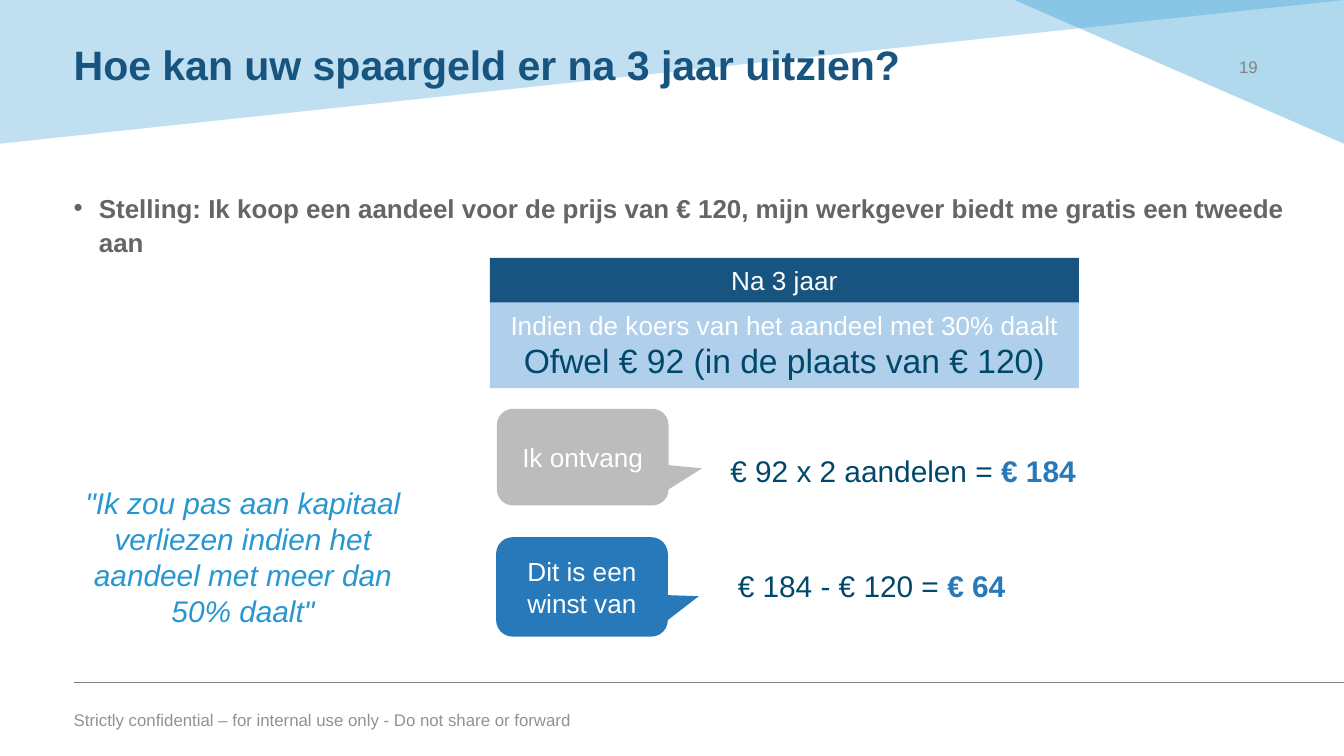
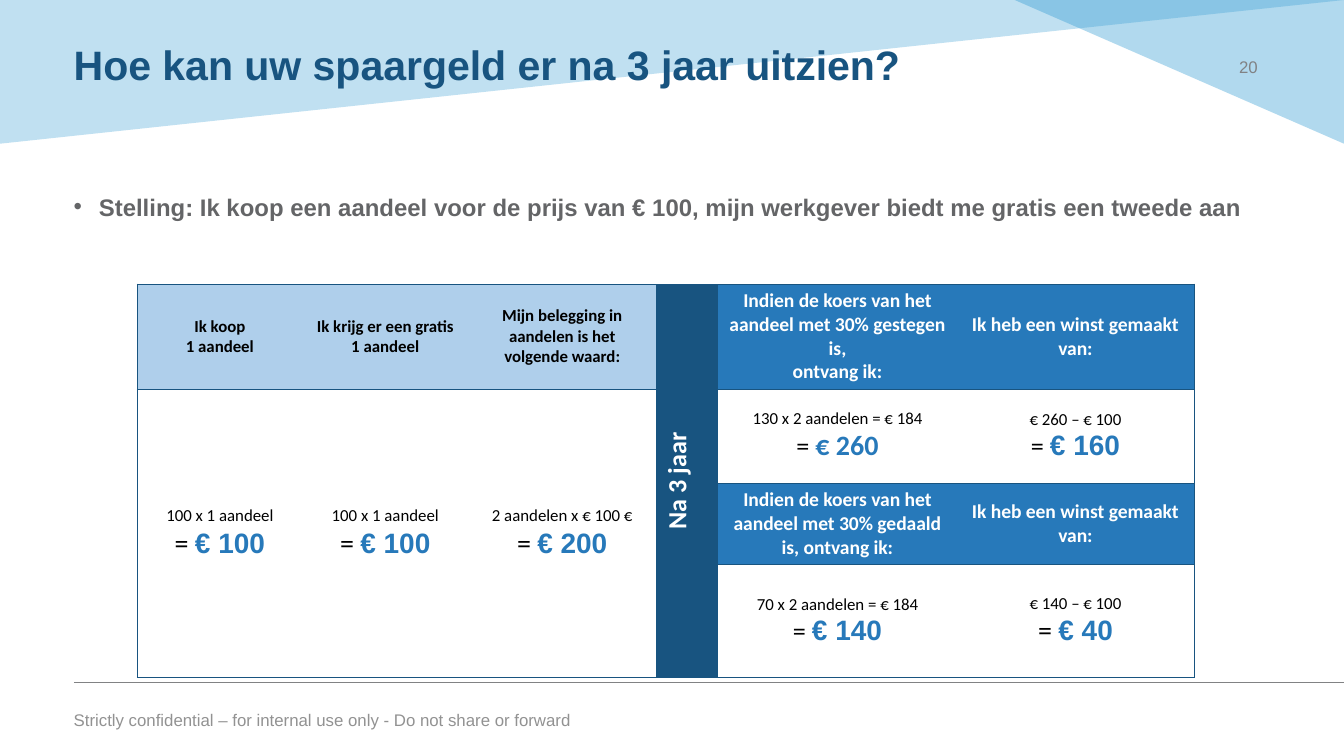
from lxml import etree
from pptx import Presentation
from pptx import util as u
from pptx.dml.color import RGBColor
from pptx.enum import shapes, text
from pptx.oxml import ns

Pt = u.Pt
NAVY = RGBColor(0x18, 0x54, 0x80)
BLUE = RGBColor(0x27, 0x79, 0xBA)
SKY = RGBColor(0x28, 0x97, 0xD1)
PALE = RGBColor(0xAF, 0xCF, 0xEB)
DEEP = RGBColor(0x00, 0x48, 0x6B)
GRAY = RGBColor(0xBC, 0xBC, 0xBC)
RULE = RGBColor(0x81, 0x82, 0x84)
FOOT = RGBColor(0x92, 0x92, 0x92)
BODY = RGBColor(0x64, 0x65, 0x67)
WHITE = RGBColor(0xFF, 0xFF, 0xFF)
BLACK = RGBColor(0, 0, 0)

TOP, MID = text.MSO_ANCHOR.TOP, text.MSO_ANCHOR.MIDDLE
LEFT, MIDDLE = text.PP_ALIGN.LEFT, text.PP_ALIGN.CENTER
SHAPE = shapes.MSO_SHAPE
NO_GRID = "{2D5ABB26-0587-4C30-8999-92F81FD0307C}"


def run(words, size, color, bold=False, italic=False, face="Arial"):
    return words, size, color, bold, italic, face


def sub(parent, tag, **attrs):
    return etree.SubElement(parent, ns.qn(tag), **attrs)


class Deck:
    title = "Hoe kan uw spaargeld er na 3 jaar uitzien?"
    footer = "Strictly confidential – for internal use only - Do not share or forward"

    def __init__(self):
        self.prs = Presentation()
        self.prs.slide_width, self.prs.slide_height = Pt(720), Pt(405)
        self.slide = None

    def page(self, number):
        """Start a slide with the shared bands, rule, footer and title."""
        self.slide = self.prs.slides.add_slide(self.prs.slide_layouts[6])
        self.band(543.6, 176.4, 36)
        self.band(0, 720, 29, flip=True)
        self.rule(39.6, 735, 365.8)
        self.label((32.4, 376.6, 490, 25), [[run(self.footer, 9, FOOT)]])
        self.label((32.4, 15.8, 612.7, 40.3),
                   [[run(self.title, 22, NAVY, True)]], anchor=MID, space=0.9)
        num = self.label((651.6, 15.1, 38.9, 41.8),
                         [[run(str(number), 9, RULE)]], anchor=MID)
        num.text_frame.margin_left = Pt(12.2)

    def fill(self, frame, paras, align, anchor):
        """Write paragraphs, each a list of runs, into a text frame."""
        frame.word_wrap = True
        frame.vertical_anchor = anchor
        for i, parts in enumerate(paras):
            para = frame.add_paragraph() if i else frame.paragraphs[0]
            para.alignment = align
            for words, size, color, bold, italic, face in parts:
                item = para.add_run()
                item.text = words
                font = item.font
                font.size, font.name = Pt(size), face
                font.bold, font.italic = bold, italic
                font.color.rgb = color

    def label(self, at, paras, align=LEFT, anchor=TOP, space=None):
        box = self.slide.shapes.add_textbox(*map(Pt, at))
        self.fill(box.text_frame, paras, align, anchor)
        if space:
            box.text_frame.paragraphs[0].line_spacing = space
        return box

    def bullet(self, at, words, size):
        box = self.label(at, [[run(words, size, BODY, True)]], space=1.1)
        para = box.text_frame.paragraphs[0]
        para.space_after = Pt(2)
        props = para._p.get_or_add_pPr()
        props.set("marL", str(Pt(13.5)))
        props.set("indent", str(-Pt(13.5)))
        sub(props, "a:buFont", typeface="Arial")
        sub(props, "a:buChar", char="•")

    def shape(self, kind, at, color, paras=(), anchor=MID):
        item = self.slide.shapes.add_shape(kind, *map(Pt, at))
        item.shadow.inherit = False
        item.fill.solid()
        item.fill.fore_color.rgb = color
        item.line.fill.background()
        self.fill(item.text_frame, paras, MIDDLE, anchor)
        return item

    def band(self, left, width, alpha, flip=False):
        item = self.shape(SHAPE.RIGHT_TRIANGLE, (left, 0, width, 77), SKY)
        item.rotation = 180
        if flip:
            item.element.spPr.xfrm.set("flipH", "1")
        tint = item.element.spPr.find(".//" + ns.qn("a:srgbClr"))
        sub(tint, "a:alpha", val=str(alpha * 1000))

    def bubble(self, at, words, color, tip):
        item = self.shape(SHAPE.ROUNDED_RECTANGULAR_CALLOUT, at, color,
                          [[run(words, 14, WHITE)]])
        for i, value in enumerate((*tip, 0.167)):
            item.adjustments[i] = value

    def rule(self, start, end, top):
        line = self.slide.shapes.add_connector(
            shapes.MSO_CONNECTOR.STRAIGHT, Pt(start), Pt(top), Pt(end), Pt(top))
        line.line.color.rgb, line.line.width = RULE, Pt(0.5)
        sub(line.element.spPr, "a:effectLst")

    def sum(self, at, words, result):
        self.label(at, [[run(words, 16, DEEP), run(result, 16, BLUE, True)]])

    def edge(self, cell, sides):
        props = cell._tc.get_or_add_tcPr()
        for side in sides:
            line = sub(props, "a:ln" + side, w=str(Pt(0.5)))
            sub(sub(line, "a:solidFill"), "a:srgbClr", val=str(NAVY))

    def table(self, at, cols, rows, spans, cells):
        """Draw a table; cells maps (row, column) to paragraphs and a fill."""
        grid = self.slide.shapes.add_table(
            len(rows), len(cols), *map(Pt, (*at, sum(cols), sum(rows)))).table
        grid._tbl.tblPr[0].text = NO_GRID
        grid.first_row = grid.horz_banding = False
        for col, width in zip(grid.columns, cols):
            col.width = Pt(width)
        for row, height in zip(grid.rows, rows):
            row.height = Pt(height)
        for start, end in spans:
            grid.cell(*start).merge(grid.cell(*end))
        last, right = len(rows) - 1, len(cols) - 1
        for r in range(last + 1):
            for c in range(right + 1):
                cell = grid.cell(r, c)
                own = not cell.is_spanned
                flags = (("L", c == 0), ("R", c == right),
                         ("T", own), ("B", own or r == last))
                self.edge(cell, [side for side, on in flags if on])
                if (r, c) not in cells:
                    continue
                paras, color = cells[r, c]
                cell.margin_left = cell.margin_right = Pt(5)
                cell.margin_top = cell.margin_bottom = Pt(2.7)
                self.fill(cell.text_frame, paras, MIDDLE, MID)
                cell.vertical_anchor = MID
                if color is None:
                    cell.fill.background()
                else:
                    cell.fill.solid()
                    cell.fill.fore_color.rgb = color
        return grid


def head(lines, size, ink, color):
    return [[run(line, size, ink, True, face="Calibri")] for line in lines], color


def value(work, result, size=15, face="Arial"):
    return [[run(work, 9, BLACK, face="Calibri")],
            [run("= ", size, BLACK, face="Calibri"),
             run(result, 15, BLUE, True, face=face)]], None


def loss(deck):
    deck.page(19)
    deck.bullet((32.4, 97.9, 675.4, 44.6),
                "Stelling: Ik koop een aandeel voor de prijs van € 120, "
                "mijn werkgever biedt me gratis een tweede aan", 13.9)
    # Scenario heading
    deck.shape(SHAPE.RECTANGLE, (262.5, 138.2, 315.5, 24.2), NAVY,
               [[run("Na 3 jaar", 14, WHITE)]], TOP)
    deck.shape(SHAPE.RECTANGLE, (262.5, 162, 315.5, 46), PALE,
               [[run("Indien de koers van het aandeel met 30% daalt", 14, WHITE)],
                [run("Ofwel € 92 (in de plaats van € 120)", 18, DEEP)]], TOP)
    # Outcomes
    deck.bubble((266.2, 219, 92, 51.8), "Ik ontvang", GRAY, (0.695, 0.116))
    deck.sum((384.2, 239, 204.5, 26.6), "€ 92 x 2 aandelen = ", "€ 184")
    deck.bubble((265.8, 287.8, 92, 53.3), "Dit is een winst van", BLUE, (0.68, 0.094))
    deck.sum((388.2, 300.8, 204.5, 26.6), "€ 184 - € 120 = ", "€ 64")
    # Quote
    deck.label((36.9, 256.3, 186.5, 85),
               [[run('"Ik zou pas aan kapitaal verliezen indien het aandeel '
                     'met meer dan 50% daalt"', 16, SKY, italic=True)]], MIDDLE)


def gain(deck):
    deck.page(20)
    deck.bullet((32.4, 97.9, 681, 33.8),
                "Stelling: Ik koop een aandeel voor de prijs van € 100, "
                "mijn werkgever biedt me gratis een tweede aan", 12.8)
    profit = head(["Ik heb een winst gemaakt van:"], 10.5, WHITE, BLUE)
    cells = {
        # Purchase
        (0, 0): head(["Ik koop", "1 aandeel"], 9, BLACK, PALE),
        (0, 1): head(["Ik krijg er een gratis", "1 aandeel"], 9, BLACK, PALE),
        (0, 2): head(["Mijn belegging in aandelen is het volgende waard:"],
                     9, BLACK, PALE),
        (1, 0): value("100 x 1 aandeel", "€ 100"),
        (1, 1): value("100 x 1 aandeel", "€ 100"),
        (1, 2): value("2 aandelen x € 100 €", "€ 200"),
        (0, 3): head(["Na 3 jaar"], 14, WHITE, NAVY),
        # Price up
        (0, 4): head(["Indien de koers van het aandeel met 30% gestegen is,",
                      "ontvang ik:"], 10.5, WHITE, BLUE),
        (0, 5): profit,
        (1, 4): value("130 x 2 aandelen = € 184", "€ 260", 14, "Calibri"),
        (1, 5): value("€ 260 – € 100", "€ 160", 14),
        # Price down
        (2, 4): head(["Indien de koers van het aandeel met 30% gedaald is, "
                      "ontvang ik:"], 10.5, WHITE, BLUE),
        (2, 5): profit,
        (3, 4): value("70 x 2 aandelen = € 184", "€ 140", 14),
        (3, 5): value("€ 140 – € 100", "€ 40"),
    }
    spans = [((1, c), (3, c)) for c in range(3)] + [((0, 3), (3, 3))]
    grid = deck.table((73.5, 152.2), (88.6, 88.6, 101, 33, 128, 127),
                      (56.2, 50.4, 43.4, 61), spans, cells)
    grid.cell(0, 3)._tc.get_or_add_tcPr().set("vert", "vert270")


def main():
    deck = Deck()
    loss(deck)
    gain(deck)
    deck.prs.save("out.pptx")


if __name__ == "__main__":
    main()
